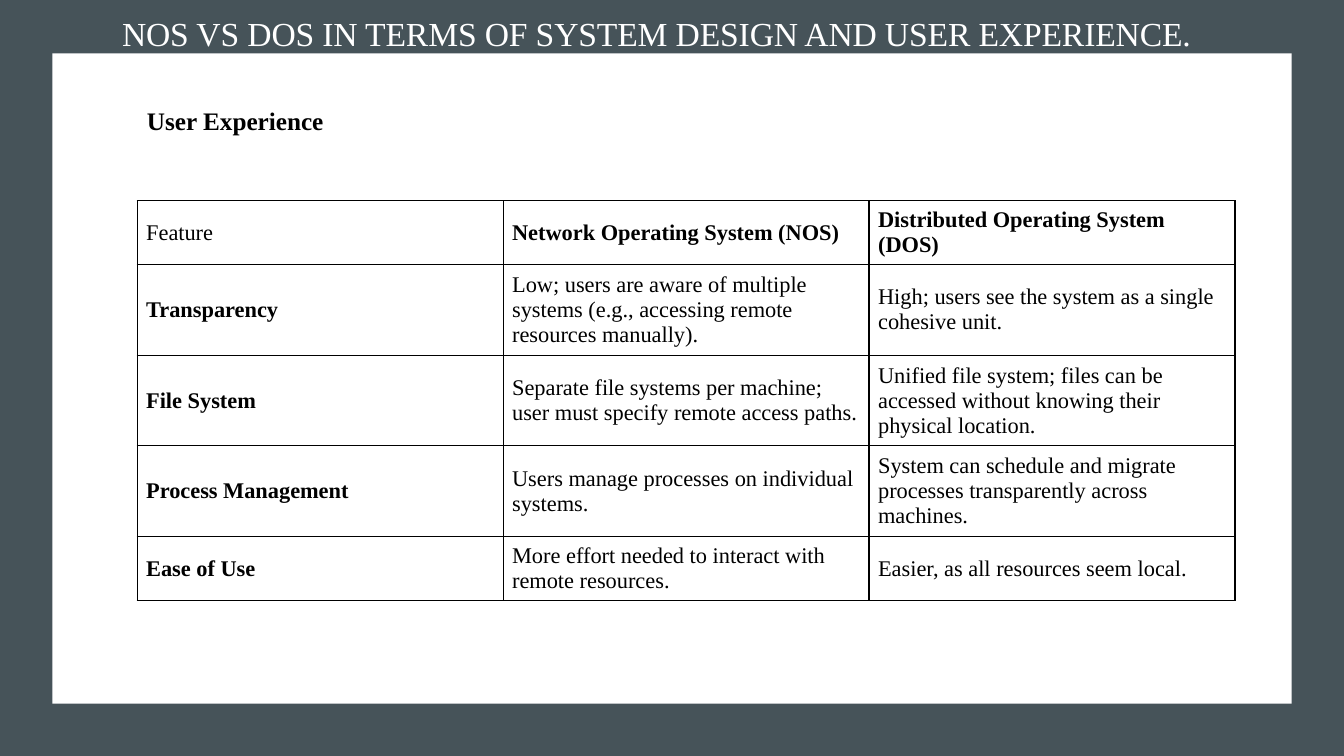
"""Build the slide comparing the user experience of NOS and DOS."""
from lxml import etree
from pptx import Presentation
from pptx.dml.color import RGBColor
from pptx.enum.shapes import MSO_SHAPE
from pptx.enum.text import MSO_ANCHOR
from pptx.oxml.ns import qn
from pptx.util import Inches, Pt

RECTANGLE = MSO_SHAPE.RECTANGLE
MIDDLE, BOTTOM = MSO_ANCHOR.MIDDLE, MSO_ANCHOR.BOTTOM
SLATE = RGBColor(0x46, 0x53, 0x59)
WHITE = RGBColor(0xFF, 0xFF, 0xFF)
BLACK = RGBColor(0x00, 0x00, 0x00)
FONT = "Times New Roman"

TITLE = "NOS VS DOS IN TERMS OF SYSTEM DESIGN AND USER EXPERIENCE."
SUBTITLE = "User Experience"
COMPARISON = [
    ("Feature", "Network Operating System (NOS)", "Distributed Operating System (DOS)"),
    ("Transparency",
     "Low; users are aware of multiple systems (e.g., accessing remote resources manually).",
     "High; users see the system as a single cohesive unit."),
    ("File System",
     "Separate file systems per machine; user must specify remote access paths.",
     "Unified file system; files can be accessed without knowing their physical location."),
    ("Process Management",
     "Users manage processes on individual systems.",
     "System can schedule and migrate processes transparently across machines."),
    ("Ease of Use",
     "More effort needed to interact with remote resources.",
     "Easier, as all resources seem local."),
]
ROW_HEIGHTS = [0.63, 0.9, 0.9, 0.9, 0.63]
COLUMN_WIDTH = 3.63
PANELS = [((0, 0, 13.33, 7.5), SLATE), ((0.52, 0.53, 12.29, 6.45), WHITE)]


def inches(*lengths):
    return [Inches(length) for length in lengths]


def style(paragraph, size, color, bold=False):
    font = paragraph.runs[0].font
    font.name, font.size, font.bold = FONT, Pt(size), bold
    font.color.rgb = color


def add_label(slide, box, text, size, color, anchor, bold=False):
    frame = slide.shapes.add_textbox(*inches(*box)).text_frame
    frame.text = text
    frame.vertical_anchor = anchor
    style(frame.paragraphs[0], size, color, bold)
    return frame


def add_borders(cell):
    properties = cell._tc.get_or_add_tcPr()
    for position, side in enumerate(("a:lnL", "a:lnR", "a:lnT", "a:lnB")):
        line = etree.Element(qn(side), w=str(Pt(1)))
        fill = etree.SubElement(line, qn("a:solidFill"))
        etree.SubElement(fill, qn("a:srgbClr"), val=str(BLACK))
        properties.insert(position, line)


def add_comparison(slide):
    columns = len(COMPARISON[0])
    box = inches(1.36, 1.99, columns * COLUMN_WIDTH, sum(ROW_HEIGHTS))
    table = slide.shapes.add_table(len(COMPARISON), columns, *box).table
    for column in table.columns:
        column.width = Inches(COLUMN_WIDTH)
    for row_index, texts in enumerate(COMPARISON):
        table.rows[row_index].height = Inches(ROW_HEIGHTS[row_index])
        for column_index, text in enumerate(texts):
            cell = table.cell(row_index, column_index)
            cell.text = text
            cell.vertical_anchor = MIDDLE
            cell.margin_left = cell.margin_right = Inches(0.09)
            cell.margin_top = cell.margin_bottom = Inches(0.05)
            cell.fill.background()
            is_heading = (row_index == 0) != (column_index == 0)
            style(cell.text_frame.paragraphs[0], 16, BLACK, is_heading)
            add_borders(cell)


def main():
    deck = Presentation()
    deck.slide_width, deck.slide_height = inches(13.33, 7.5)
    slide = deck.slides.add_slide(deck.slide_layouts[6])

    for box, color in PANELS:
        panel = slide.shapes.add_shape(RECTANGLE, *inches(*box))
        panel.shadow.inherit = False
        panel.fill.solid()
        panel.fill.fore_color.rgb = color
        panel.line.fill.background()

    title = add_label(slide, (1.19, 0.11, 11.62, 0.42), TITLE, 24, WHITE, BOTTOM)
    title.word_wrap = True
    title.margin_left = title.margin_right = title.margin_bottom = 0
    title.margin_top = Inches(0.02)
    heading = title.paragraphs[0]
    heading.space_before = Pt(1.3)
    heading._p.get_or_add_pPr().set("marL", str(Inches(0.02)))
    heading.runs[0].font._element.set("spc", "-10")

    subtitle = add_label(slide, (1.36, 0.99, 1.97, 0.4), SUBTITLE, 18, BLACK, MIDDLE, True)
    subtitle.word_wrap = False
    add_comparison(slide)
    deck.save("out.pptx")


if __name__ == "__main__":
    main()
